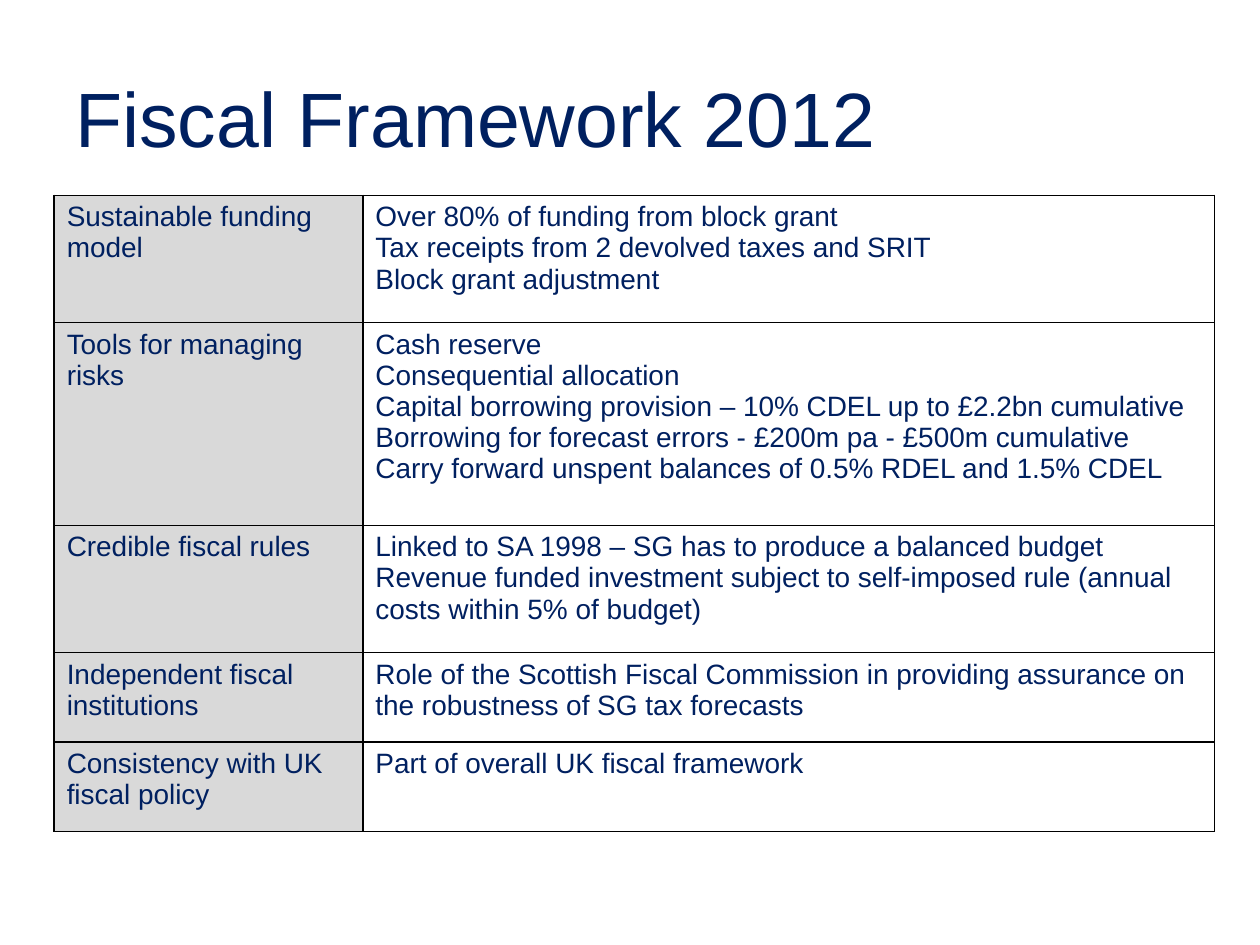
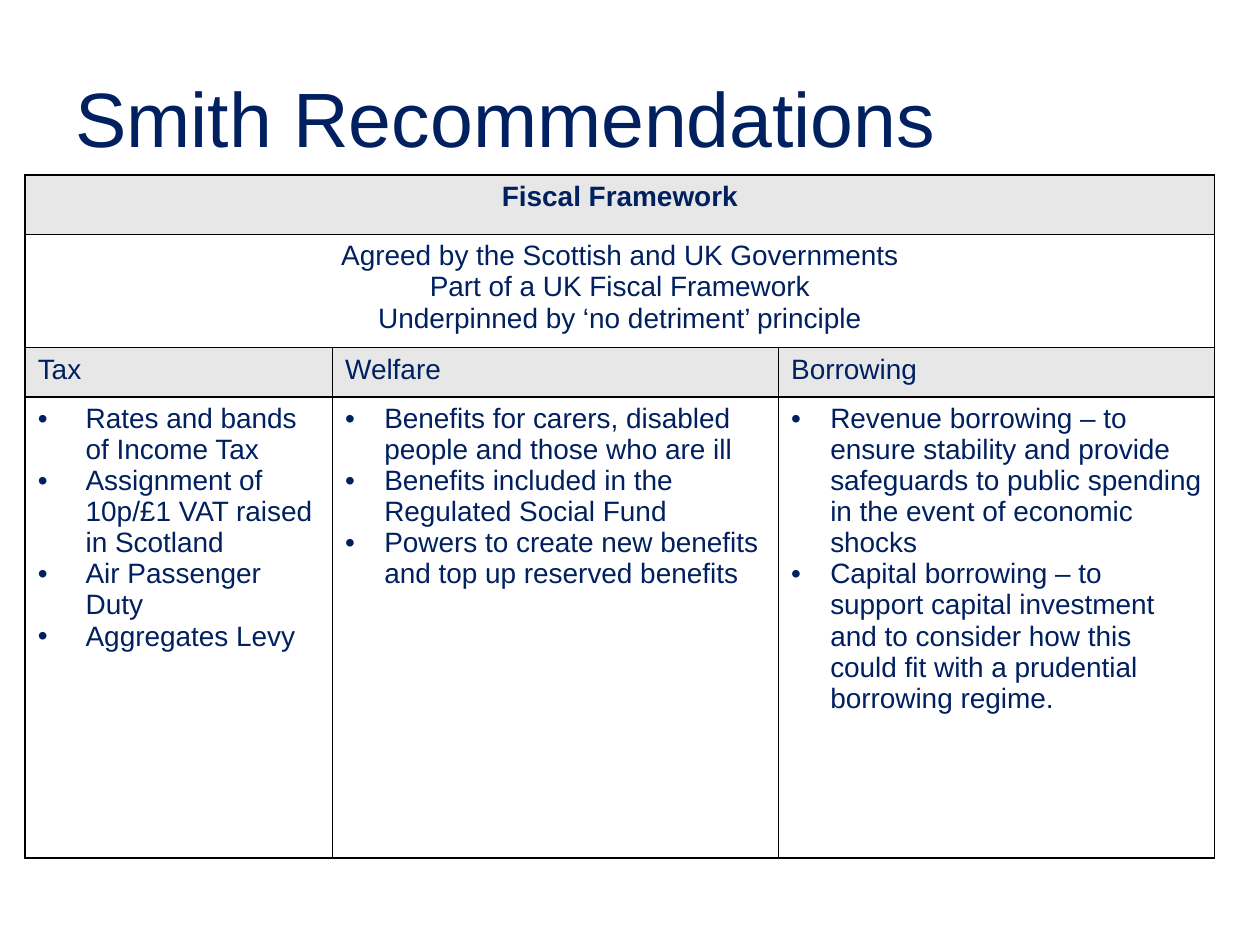
"""Build two slides on the Scottish fiscal framework."""
from dataclasses import dataclass

from lxml import etree
from pptx import Presentation
from pptx import util as u
from pptx.dml.color import RGBColor
from pptx.enum import text
from pptx.oxml.ns import qn


@dataclass(frozen=True)
class Theme:
    font: str = "Arial"
    navy: RGBColor = RGBColor.from_string("002060")
    label_fill: RGBColor = RGBColor.from_string("D9D9D9")
    header_fill: RGBColor = RGBColor.from_string("E7E7E7")
    border: str = "000000"
    border_width: int = u.Pt(1)
    title_size: int = u.Pt(44)
    body_size: int = u.Pt(16)


theme = Theme()
prs = Presentation()
prs.slide_width, prs.slide_height = u.Inches(10), u.Inches(7.5)


def add_titled_table(title, left, top, widths, heights):
    s = prs.slides.add_slide(prs.slide_layouts[6])
    box = s.shapes.add_textbox(u.Inches(0.5), u.Inches(0.3), u.Inches(9), u.Inches(1.25))
    tf = box.text_frame
    tf.word_wrap = True
    tf.vertical_anchor = text.MSO_ANCHOR.MIDDLE
    tf.text = title
    font = tf.paragraphs[0].runs[0].font
    font.name, font.size, font.color.rgb = theme.font, theme.title_size, theme.navy

    frame = s.shapes.add_table(
        len(heights), len(widths), u.Inches(left), u.Inches(top),
        u.Inches(sum(widths)), u.Inches(sum(heights)))
    table = frame.table
    table.first_row = table.horz_banding = False
    for column, width in zip(table.columns, widths):
        column.width = u.Inches(width)
    for row, height in zip(table.rows, heights):
        row.height = u.Inches(height)
    for cell in table.iter_cells():
        tcPr = cell._tc.get_or_add_tcPr()
        for side in ("a:lnL", "a:lnR", "a:lnT", "a:lnB"):
            ln = etree.SubElement(tcPr, qn(side), w=str(theme.border_width))
            fill = etree.SubElement(ln, qn("a:solidFill"))
            etree.SubElement(fill, qn("a:srgbClr"), val=theme.border)
        cell.fill.background()
    return table


def fill_cell(cell, lines, fill=None, align=text.PP_ALIGN.LEFT, bold=False, indent=None):
    cell.text_frame.text = "\n".join(lines)
    if fill is not None:
        cell.fill.solid()
        cell.fill.fore_color.rgb = fill
    for p in cell.text_frame.paragraphs:
        if indent:
            pPr = p._p.get_or_add_pPr()
            pPr.set("marL", str(u.Inches(indent)))
            pPr.set("indent", str(-u.Inches(indent)))
            etree.SubElement(pPr, qn("a:buFont"), typeface=theme.font)
            etree.SubElement(pPr, qn("a:buChar"), char="•")
        p.alignment = align
        for r in p.runs:
            r.font.name, r.font.size = theme.font, theme.body_size
            r.font.color.rgb, r.font.bold = theme.navy, bold


framework = [
    ("Sustainable funding model", [
        "Over 80% of funding from block grant",
        "Tax receipts from 2 devolved taxes and SRIT",
        "Block grant adjustment"]),
    ("Tools for managing risks", [
        "Cash reserve",
        "Consequential allocation",
        "Capital borrowing provision – 10% CDEL up to £2.2bn cumulative",
        "Borrowing for forecast errors - £200m pa - £500m cumulative",
        "Carry forward unspent balances of 0.5% RDEL and 1.5% CDEL"]),
    ("Credible fiscal rules", [
        "Linked to SA 1998 – SG has to produce a balanced budget",
        "Revenue funded investment subject to self-imposed rule "
        "(annual costs within 5% of budget)"]),
    ("Independent fiscal institutions", [
        "Role of the Scottish Fiscal Commission in providing assurance on "
        "the robustness of SG tax forecasts"]),
    ("Consistency with UK fiscal policy", ["Part of overall UK fiscal framework"]),
]
table = add_titled_table("Fiscal Framework 2012", 0.43, 1.55,
                         [2.45, 6.76], [1.01, 1.61, 1.01, 0.71, 0.71])
for i, (label, details) in enumerate(framework):
    fill_cell(table.cell(i, 0), [label], fill=theme.label_fill)
    fill_cell(table.cell(i, 1), details)

principles = [
    "Agreed by the Scottish and UK Governments",
    "Part of a UK Fiscal Framework",
    "Underpinned by ‘no detriment’ principle",
]
powers = [
    ("Tax", 0.38, [
        "Rates and bands of Income Tax",
        "Assignment of 10p/£1 VAT raised in Scotland",
        "Air Passenger Duty",
        "Aggregates Levy"]),
    ("Welfare", 0.31, [
        "Benefits for carers, disabled people and those who are ill",
        "Benefits included in the Regulated Social Fund",
        "Powers to create new benefits and top up reserved benefits"]),
    ("Borrowing", 0.31, [
        "Revenue borrowing – to ensure stability and provide safeguards to "
        "public spending in the event of economic shocks",
        "Capital borrowing – to support capital investment and to consider "
        "how this could fit with a prudential borrowing regime."]),
]
table = add_titled_table("Smith Recommendations", 0.2, 1.39,
                         [2.44, 3.54, 3.46], [0.47, 0.86, 0.39, 3.66])
for i in range(2):
    table.cell(i, 0).merge(table.cell(i, 2))
fill_cell(table.cell(0, 0), ["Fiscal Framework"], fill=theme.header_fill,
          align=text.PP_ALIGN.CENTER, bold=True)
fill_cell(table.cell(1, 0), principles, align=text.PP_ALIGN.CENTER)
for j, (area, indent, items) in enumerate(powers):
    fill_cell(table.cell(2, j), [area], fill=theme.header_fill)
    fill_cell(table.cell(3, j), items, indent=indent)

prs.save("out.pptx")
